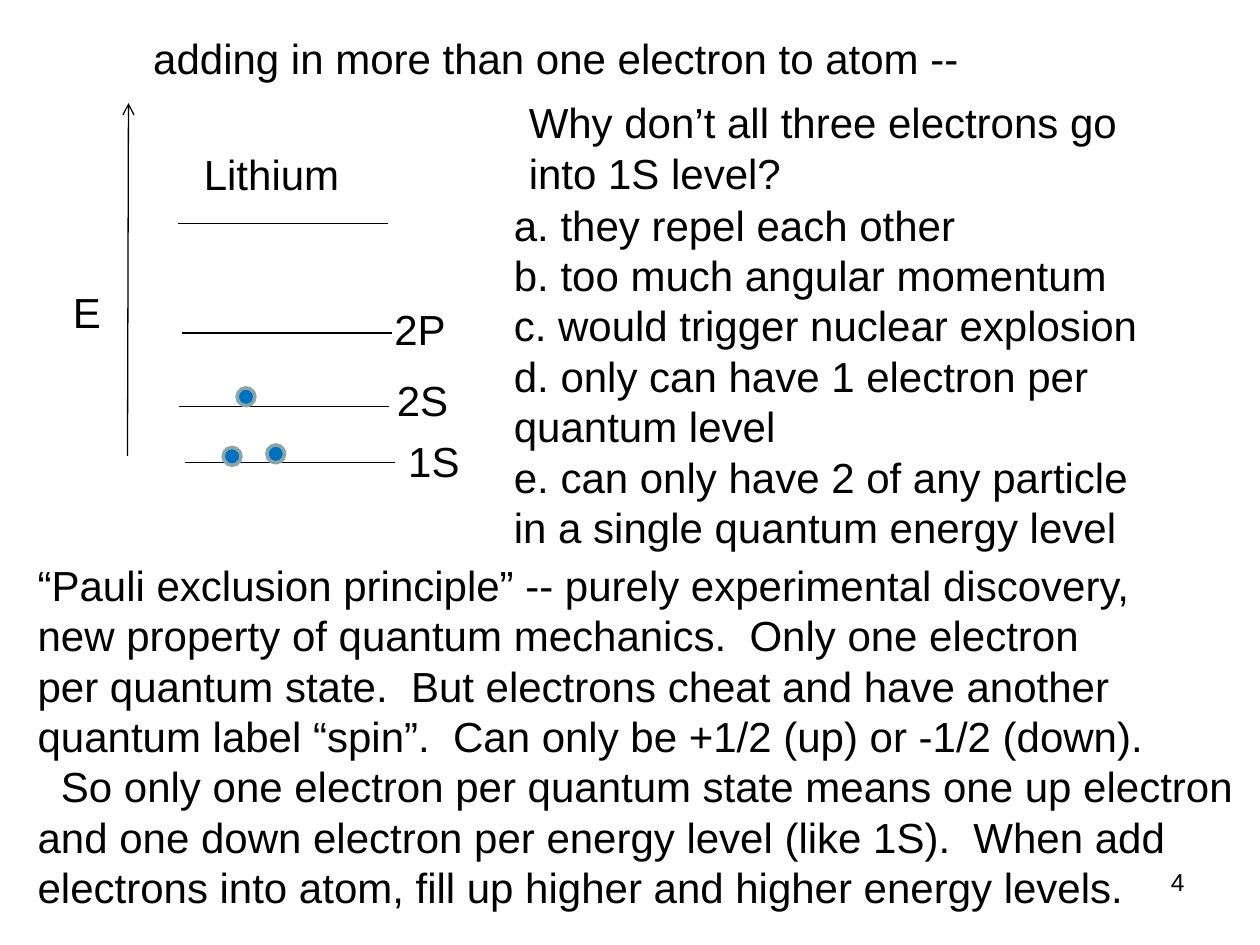
from dataclasses import dataclass

from lxml.etree import SubElement
from pptx import Presentation
from pptx.dml.color import RGBColor
from pptx.enum.shapes import MSO_CONNECTOR, MSO_SHAPE
from pptx.enum.text import MSO_AUTO_SIZE, PP_ALIGN
from pptx.oxml.ns import qn
from pptx.util import Cm, Pt


@dataclass(frozen=True)
class Theme:
    font: str = "Arial"
    body_size: float = 24
    number_size: float = 14
    ink: RGBColor = RGBColor(0x00, 0x00, 0x00)
    electron_fill: RGBColor = RGBColor(0x00, 0x70, 0xC0)
    electron_rim: RGBColor = RGBColor(0x8A, 0xA6, 0xA8)
    line_width: float = 0.75
    rim_width: float = 2


def write_text(frame, lines, *, font, size, color, align=PP_ALIGN.LEFT, last_indent=0):
    """Fill the frame, one paragraph a line; last_indent (cm) is the last one's first-line indent."""
    for index, line in enumerate(lines):
        paragraph = frame.paragraphs[0] if index == 0 else frame.add_paragraph()
        paragraph.alignment = align
        run = paragraph.add_run()
        run.text = line
        run.font.name = font
        run.font.size = Pt(size)
        run.font.color.rgb = color
    if last_indent:
        paragraph._p.get_or_add_pPr().set("indent", str(Cm(last_indent)))


class SlideBuilder:
    def __init__(self, slide, theme):
        self.slide = slide
        self.theme = theme

    def text(self, lines, left, top, width, height, wrap=False, size=None, **text_format):
        box = self.slide.shapes.add_textbox(Cm(left), Cm(top), Cm(width), Cm(height))
        frame = box.text_frame
        frame.word_wrap = wrap
        frame.auto_size = MSO_AUTO_SIZE.NONE if wrap else MSO_AUTO_SIZE.SHAPE_TO_FIT_TEXT
        write_text(frame, lines, font=self.theme.font, size=size or self.theme.body_size,
                   color=self.theme.ink, **text_format)

    def line(self, x1, y1, x2, y2, arrow=False):
        connector = self.slide.shapes.add_connector(
            MSO_CONNECTOR.STRAIGHT, Cm(x1), Cm(y1), Cm(x2), Cm(y2))
        connector.line.color.rgb = self.theme.ink
        connector.line.width = Pt(self.theme.line_width)
        properties = connector._element.spPr
        if arrow:
            SubElement(properties.find(qn("a:ln")), qn("a:tailEnd"), type="arrow")
        SubElement(properties, qn("a:effectLst"))

    def electron(self, left, top, diameter=0.36):
        dot = self.slide.shapes.add_shape(
            MSO_SHAPE.OVAL, Cm(left), Cm(top), Cm(diameter), Cm(diameter))
        dot.shadow.inherit = False
        dot.fill.solid()
        dot.fill.fore_color.rgb = self.theme.electron_fill
        dot.line.color.rgb = self.theme.electron_rim
        dot.line.width = Pt(self.theme.rim_width)


LEVEL_LENGTH = 4.24
LEVELS = [(3.73, 9.32), (3.61, 8.2), (3.66, 6.71), (3.58, 4.5)]
LEVEL_LABELS = [("1S", 7.98, 8.66), ("2S", 7.75, 7.42), ("2P", 7.7, 5.99)]
ELECTRONS = [(4.5, 9.02), (5.38, 8.97), (4.78, 7.82)]

QUESTION = ["Why don’t all three electrons go", "into 1S level?"]
ANSWERS = [
    "a. they repel each other",
    "b. too much angular momentum",
    "c. would trigger nuclear explosion",
    "d. only can have 1 electron per",
    "quantum level",
    "e. can only have 2 of any particle",
    "in a single quantum energy level",
]
EXPLANATION = [
    "“Pauli exclusion principle” -- purely experimental discovery,",
    "new property of quantum mechanics.  Only one electron",
    "per quantum state.  But electrons cheat and have another",
    "quantum label “spin”.  Can only be +1/2 (up) or -1/2 (down).",
    "So only one electron per quantum state means one up electron and one down "
    "electron per energy level (like 1S).  When add electrons into atom, "
    "fill up higher and higher energy levels.",
]


def main():
    presentation = Presentation()
    presentation.slide_width, presentation.slide_height = Cm(25.4), Cm(19.05)
    theme = Theme()
    builder = SlideBuilder(
        presentation.slides.add_slide(presentation.slide_layouts[6]), theme)

    builder.text(["4"], 18.2, 17.36, 5.93, 1.32, wrap=True,
                 size=theme.number_size, align=PP_ALIGN.RIGHT)
    builder.text(EXPLANATION, 0.51, 11.15, 24.89, 7.45, wrap=True, last_indent=0.47)
    builder.text(["adding in more than one electron to atom --"], 2.84, 0.53, 16.92, 1.27)

    for left, y in LEVELS:
        builder.line(left, y, left + LEVEL_LENGTH, y)
    for left, top in ELECTRONS:
        builder.electron(left, top)
    for label, left, top in LEVEL_LABELS:
        builder.text([label], left, top, 1.55, 1.27)

    builder.text(["Lithium"], 3.86, 2.87, 3.28, 1.27)
    builder.line(2.57, 9.19, 2.59, 2.08, arrow=True)
    builder.text(["E"], 1.22, 5.66, 1.09, 1.27)

    builder.text(QUESTION, 10.41, 1.83, 12.73, 2.31)
    builder.text(ANSWERS, 10.11, 3.89, 13.36, 7.45)

    presentation.save("out.pptx")


if __name__ == "__main__":
    main()
